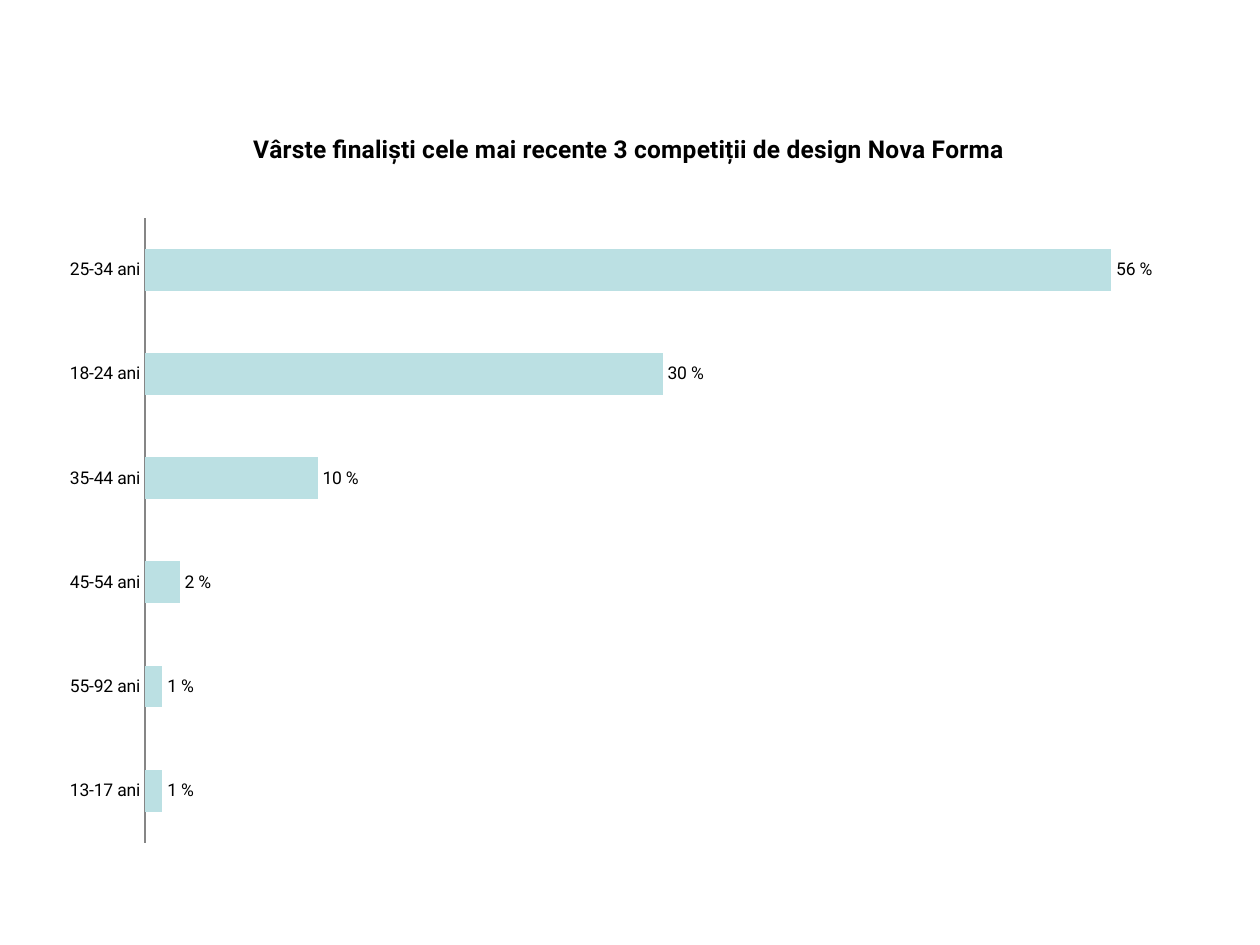
"""Build a slide with a bar chart of finalist ages."""
import pptx
import pptx.chart.data
import pptx.dml.color
import pptx.enum.chart
import pptx.enum.shapes
import pptx.oxml
import pptx.oxml.ns
import pptx.util

Cm, Pt = pptx.util.Cm, pptx.util.Pt
qn = pptx.oxml.ns.qn
HUES = {"paper": "FFFFFF", "ink": "000000", "bar": "BBE0E3", "axis": "868686"}
TEXT = {"name": "Roboto", "size": Pt(10), "bold": False}
HEAD = {"name": "Roboto", "size": Pt(14), "bold": True}
AGES = {"13-17 ani": 1, "55-92 ani": 1, "45-54 ani": 2,
        "35-44 ani": 10, "18-24 ani": 30, "25-34 ani": 56}


def apply(item, look):
    for key, val in look.items():
        setattr(item, key, val)


def hue(name):
    return pptx.dml.color.RGBColor.from_string(HUES[name])


def place(node, index, **spots):
    for old in node.findall(qn("c:layout")):
        node.remove(old)
    parts = "".join(f'<c:{key} val="{val}"/>' for key, val in spots.items())
    node.insert(index, pptx.oxml.parse_xml(
        f'<c:layout {pptx.oxml.ns.nsdecls("c")}>'
        f"<c:manualLayout>{parts}</c:manualLayout></c:layout>"))


class Deck:
    def __init__(self):
        self.show = pptx.Presentation()
        apply(self.show, {"slide_width": Cm(25.4), "slide_height": Cm(19.05)})
        self.slide = self.show.slides.add_slide(self.show.slide_layouts[6])

    def font(self, font, look):
        apply(font, look)
        font.color.rgb = hue("ink")

    def panel(self):
        kind = pptx.enum.shapes.MSO_SHAPE.RECTANGLE
        panel = self.slide.shapes.add_shape(
            kind, 0, 0, self.show.slide_width, self.show.slide_height)
        panel.shadow.inherit = False
        for fill in (panel.fill, panel.line.fill):
            fill.solid()
            fill.fore_color.rgb = hue("paper")
        panel.line.width = Pt(0.75)

    def chart(self, title, ages, box):
        enum = pptx.enum.chart
        data = pptx.chart.data.CategoryChartData(number_format="0")
        data.categories = list(ages)
        data.add_series("Series 1", list(ages.values()))
        chart = self.slide.shapes.add_chart(
            enum.XL_CHART_TYPE.BAR_CLUSTERED, *map(Cm, box), data).chart
        chart.has_legend = False
        self.font(chart.font, TEXT)
        frame = chart.chart_title.text_frame
        frame.text = title
        self.font(frame.paragraphs[0].runs[0].font, HEAD)
        place(chart.chart_title.element, 1,
              xMode="edge", yMode="edge", x=0.17, y=0.03)
        place(chart.element.find(".//" + qn("c:plotArea")), 0,
              layoutTarget="inner", xMode="edge", yMode="edge",
              x=0.08, y=0.15, w=0.9, h=0.83)

        none = enum.XL_TICK_MARK.NONE
        apply(chart.category_axis, {
            "major_tick_mark": none, "minor_tick_mark": none,
            "has_major_gridlines": False})
        line = chart.category_axis.format.line
        line.color.rgb, line.width = hue("axis"), Pt(0.75)
        apply(chart.value_axis, {
            "visible": False, "has_major_gridlines": False,
            "minimum_scale": 0, "maximum_scale": 60})

        plot = chart.plots[0]
        apply(plot, {"gap_width": 150, "overlap": -25,
                     "vary_by_categories": False, "has_data_labels": True})
        apply(plot.data_labels, {
            "show_value": True, "number_format": '0" %"',
            "number_format_is_linked": False,
            "position": enum.XL_LABEL_POSITION.OUTSIDE_END})
        self.font(plot.data_labels.font, TEXT)
        fill = plot.series[0].format.fill
        fill.solid()
        fill.fore_color.rgb = hue("bar")


def main():
    deck = Deck()
    deck.panel()
    deck.chart("Vârste finaliști cele mai recente 3 competiții de design Nova Forma",
               AGES, (1.07, 2.11, 23.19, 15.19))
    deck.show.save("out.pptx")


if __name__ == "__main__":
    main()
